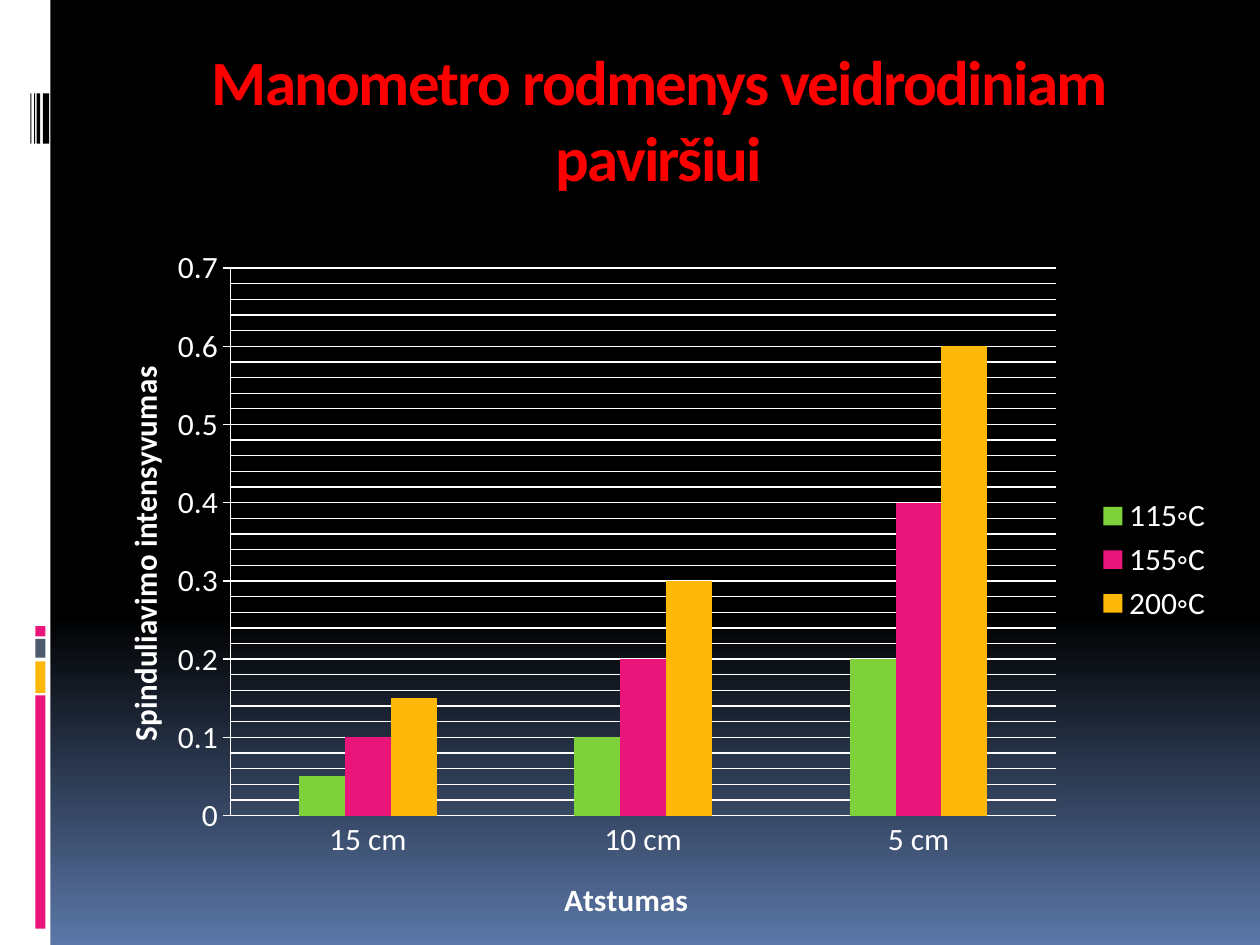
import copy

import pptx
import pptx.chart.data
import pptx.dml.color
import pptx.enum.chart
import pptx.enum.shapes
import pptx.enum.text
import pptx.oxml
import pptx.oxml.ns
import pptx.util

qn = pptx.oxml.ns.qn
color = pptx.dml.color.RGBColor.from_string

deck = pptx.Presentation()
deck.slide_width, deck.slide_height = pptx.util.Inches(10), pptx.util.Inches(7.5)
slide = deck.slides.add_slide(deck.slide_layouts[5])


def shares(left, top, width, height):
    """Turn percentages of the slide's size into lengths."""
    across, down = deck.slide_width / 100, deck.slide_height / 100
    return [round(v) for v in (left * across, top * down, width * across, height * down)]


def set_layout(parent, index, **fractions):
    """Give a chart part a fixed place, in fractions of the chart's size."""
    for old in parent.findall(qn("c:layout")):
        parent.remove(old)
    inner = '<c:layoutTarget val="inner"/>' if "w" in fractions else ""
    modes = "".join(f'<c:{k}Mode val="edge"/>' for k in "xy")
    values = "".join(f'<c:{k} val="{v}"/>' for k, v in fractions.items())
    parent.insert(index, pptx.oxml.parse_xml(
        f'<c:layout {pptx.oxml.ns.nsdecls("c")}><c:manualLayout>'
        f"{inner}{modes}{values}</c:manualLayout></c:layout>"))


# Background: black down to 65 %, then fading to blue
backdrop = slide.background.fill
backdrop.gradient()
backdrop.gradient_angle = 270
for stop, (position, tone) in zip(backdrop.gradient_stops, [(0, "000000"), (1, "5B77A8")]):
    stop.position = position
    stop.color.rgb = color(tone)
first_stop = next(slide._element.iter(qn("a:gs")))
middle_stop = copy.deepcopy(first_stop)
middle_stop.set("pos", "65000")
first_stop.addnext(middle_stop)

# Side strip with coloured blocks and a barcode
blocks = [(66.27, 1.07, "EA157A"), (67.6, 2, "4E5B6F"),
          (70, 3.33, "FEB80A"), (73.6, 24.67, "EA157A")]
bars = [(2.4, 0.1), (2.7, 0.1), (2.9, 0.3), (3.4, 0.5)]
strip = [(0, 0, 4, 100, "FFFFFF")]
strip += [(2.8, top, 0.8, height, tone) for top, height, tone in blocks]
strip += [(left, 9.87, width, 5.33, "000000") for left, width in bars]
for *place, tone in strip:
    piece = slide.shapes.add_shape(pptx.enum.shapes.MSO_SHAPE.RECTANGLE, *shares(*place))
    piece.shadow.inherit = False
    piece.fill.solid()
    piece.fill.fore_color.rgb = color(tone)
    piece.line.fill.background()

# Heading
heading = slide.shapes.title
heading.left, heading.top, heading.width, heading.height = shares(9.8, 3.87, 85, 19.47)
heading.text_frame.auto_size = pptx.enum.text.MSO_AUTO_SIZE.NONE
heading.text_frame.vertical_anchor = pptx.enum.text.MSO_ANCHOR.TOP
heading_line = heading.text_frame.paragraphs[0]
heading_line.alignment = pptx.enum.text.PP_ALIGN.CENTER
wording = heading_line.add_run()
wording.text = "Manometro rodmenys veidrodiniam paviršiui"
for name, value in {"name": "Calibri", "size": pptx.util.Pt(36), "bold": True}.items():
    setattr(wording.font, name, value)
wording.font.color.rgb = color("FF0000")
wording.font._element.set("spc", "-100")

# Radiation intensity by distance and temperature
readings = pptx.chart.data.CategoryChartData()
readings.categories = ["15 cm", "10 cm", "5 cm"]
temperatures = [("115◦C", (0.05, 0.1, 0.2), "7FD13B"),
                ("155◦C", (0.1, 0.2, 0.4), "EA157A"),
                ("200◦C", (0.15, 0.3, 0.6), "FEB80A")]
for name, values, _ in temperatures:
    readings.add_series(name, values)
chart = slide.shapes.add_chart(
    pptx.enum.chart.XL_CHART_TYPE.COLUMN_CLUSTERED,
    *shares(7.5, 21.6, 89.8, 76.67), readings).chart
chart.has_title = False
label_format = {"name": "Calibri", "size": pptx.util.Pt(18)}
for name, value in label_format.items():
    setattr(chart.font, name, value)
chart.font.color.rgb = color("FFFFFF")

chart.has_legend = True
chart.legend.position = pptx.enum.chart.XL_LEGEND_POSITION.RIGHT
chart.legend.include_in_layout = False

columns = chart.plots[0]
columns.gap_width, columns.overlap, columns.vary_by_categories = 300, 0, False
for series, (_, _, tone) in zip(columns.series, temperatures):
    series.format.fill.solid()
    series.format.fill.fore_color.rgb = color(tone)

distance, intensity = chart.category_axis, chart.value_axis
scale = {"minimum_scale": 0, "maximum_scale": 0.7, "major_unit": 0.1, "minor_unit": 0.02,
         "has_major_gridlines": True, "has_minor_gridlines": True}
for name, value in scale.items():
    setattr(intensity, name, value)
intensity.tick_labels.number_format = "General"
intensity.tick_labels.number_format_is_linked = False
distance.major_tick_mark = pptx.enum.chart.XL_TICK_MARK.NONE
intensity.major_tick_mark = pptx.enum.chart.XL_TICK_MARK.OUTSIDE
minor_grid = pptx.oxml.parse_xml(
    f'<c:spPr {pptx.oxml.ns.nsdecls("c", "a")}><a:ln w="9525"><a:solidFill>'
    '<a:srgbClr val="FFFFFF"/></a:solidFill></a:ln></c:spPr>')
intensity._element.find(qn("c:minorGridlines")).append(minor_grid)
for ruled in (distance, intensity, intensity.major_gridlines):
    ruled.format.line.width = pptx.util.Pt(0.75)
    ruled.format.line.color.rgb = color("FFFFFF")

for axis, caption, x, y in [(distance, "Atstumas", 0.41, 0.94),
                            (intensity, "Spinduliavimo intensyvumas", 0.02, 0.23)]:
    axis.axis_title.text_frame.text = caption
    font = axis.axis_title.text_frame.paragraphs[0].runs[0].font
    for name, value in {**label_format, "bold": True}.items():
        setattr(font, name, value)
    font.color.rgb = color("FFFFFF")
    set_layout(axis.axis_title._element, 1, x=x, y=y)
turned = intensity.axis_title.text_frame._txBody.find(qn("a:bodyPr"))
turned.set("rot", "-5400000")
turned.set("vert", "horz")
plot_area = chart._chartSpace.find(qn("c:chart")).find(qn("c:plotArea"))
set_layout(plot_area, 0, x=0.12, y=0.09, w=0.73, h=0.77)

deck.save("out.pptx")
